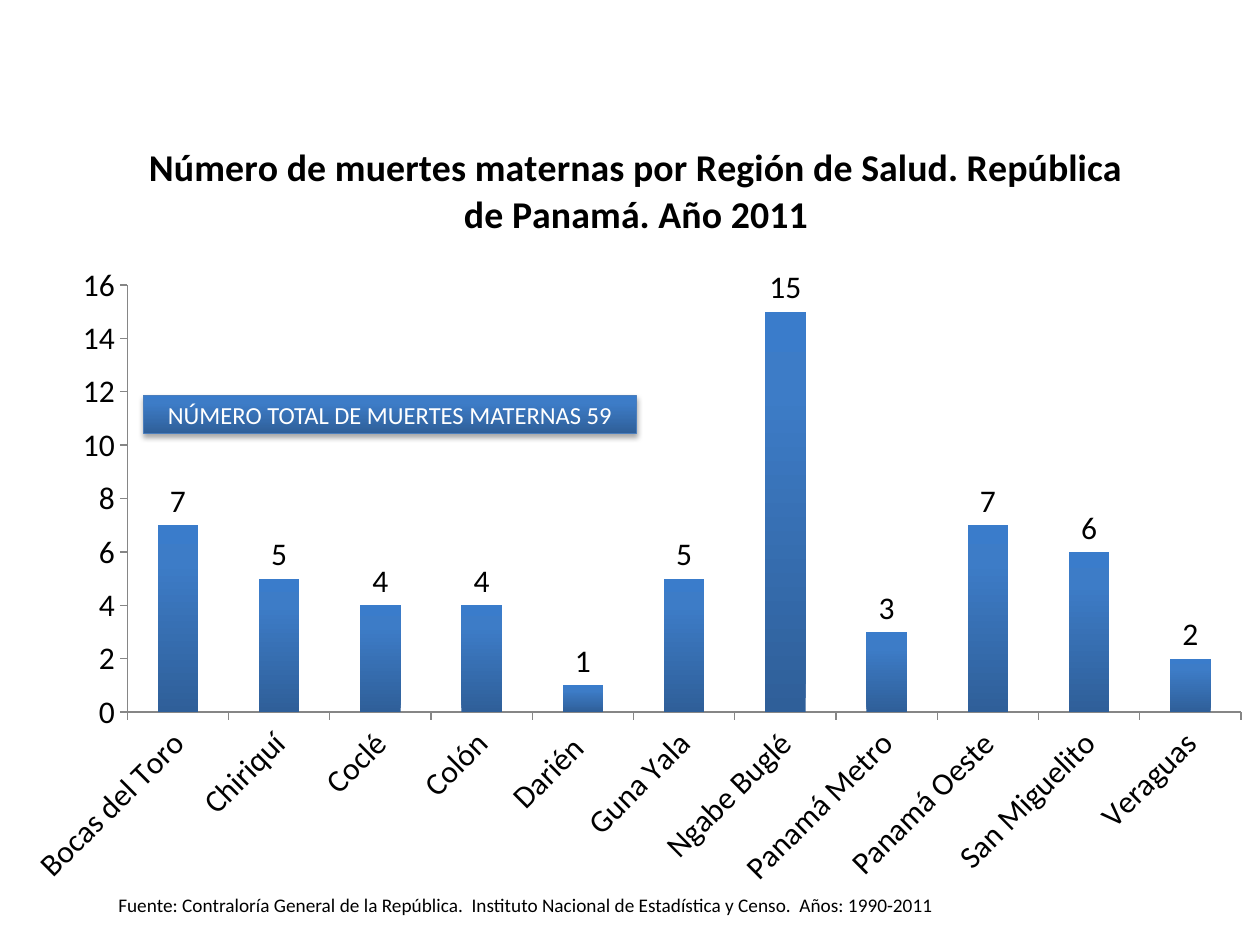
"""Build a slide charting maternal deaths by health region."""
from copy import deepcopy

from lxml import etree
from pptx import Presentation
from pptx.chart.data import CategoryChartData
from pptx.dml.color import RGBColor
from pptx.enum import chart as kinds, shapes, text
from pptx.oxml import ns, parse_xml
from pptx.util import Inches, Pt

BLACK = RGBColor(0, 0, 0)
WHITE = RGBColor(255, 255, 255)
GRAY = RGBColor(0x86, 0x86, 0x86)
EDGE = RGBColor(0x4B, 0x7E, 0xBC)
STOPS = [(0, RGBColor(0x2F, 0x5F, 0x99)),
         (0.8, RGBColor(0x3D, 0x7C, 0xC7)),
         (1, RGBColor(0x3A, 0x7C, 0xCB))]


def shade(fill, root):
    fill.gradient()
    fill.gradient_angle = 90
    group = root.find(".//" + ns.qn("a:gsLst"))
    group.append(deepcopy(group[-1]))
    for stop, (place, color) in zip(fill.gradient_stops, STOPS):
        stop.position = place
        stop.color.rgb = color


def style(font, size, color=BLACK, bold=False):
    look = {"name": "Calibri", "size": Pt(size), "bold": bold}
    for key, value in look.items():
        setattr(font, key, value)
    font.color.rgb = color


deck = Presentation()
deck.slide_width, deck.slide_height = Inches(10), Inches(7.5)
slide = deck.slides.add_slide(deck.slide_layouts[6])

deaths = {"Bocas del Toro": 7, "Chiriquí": 5, "Coclé": 4, "Colón": 4,
          "Darién ": 1, "Guna Yala": 5, "Ngabe Buglé": 15,
          "Panamá Metro": 3, "Panamá Oeste": 7, "San Miguelito": 6,
          "Veraguas": 2}
data = CategoryChartData()
data.categories = list(deaths)
data.add_series("Series 1", list(deaths.values()))
chart = slide.shapes.add_chart(
    kinds.XL_CHART_TYPE.COLUMN_CLUSTERED, Inches(0.05), Inches(0.88),
    Inches(10), Inches(6.28), data).chart
chart.has_legend = False
style(chart.font, 18)
chart.has_title = True
title = chart.chart_title.text_frame
title.text = ("Número de muertes maternas por Región de Salud. "
              "República de Panamá. Año 2011")
style(title.paragraphs[0].runs[0].font, 21.6, bold=True)

plot = chart.plots[0]
plot.gap_width = 150
plot.vary_by_categories = False
bars = plot.series[0]
shade(bars.format.fill, bars._element)
plot.has_data_labels = True
labels = plot.data_labels
labels.show_value = True
labels.position = kinds.XL_LABEL_POSITION.OUTSIDE_END
style(labels.font, 18)

for axis in (chart.category_axis, chart.value_axis):
    axis.has_major_gridlines = False
    axis.major_tick_mark = kinds.XL_TICK_MARK.OUTSIDE
    axis.minor_tick_mark = kinds.XL_TICK_MARK.NONE
    axis.format.line.color.rgb = GRAY
    axis.format.line.width = Pt(0.75)
    style(axis.tick_labels.font, 18)
chart.category_axis._element.find(".//" + ns.qn("a:bodyPr")).set("rot", "-2700000")
scale = {"minimum_scale": 0, "maximum_scale": 16, "major_unit": 2}
for key, value in scale.items():
    setattr(chart.value_axis, key, value)

area = chart._chartSpace.find(".//" + ns.qn("c:plotArea"))
for old in area.findall(ns.qn("c:layout")):
    area.remove(old)
frame = etree.Element(ns.qn("c:layout"))
box = etree.SubElement(frame, ns.qn("c:manualLayout"))
spots = {"layoutTarget": "inner", "xMode": "edge", "yMode": "edge",
         "x": "0.096", "y": "0.22", "w": "0.884", "h": "0.54"}
for key, value in spots.items():
    etree.SubElement(box, ns.qn("c:" + key)).set("val", value)
area.insert(0, frame)

total = slide.shapes.add_shape(
    shapes.MSO_SHAPE.RECTANGLE, Inches(1.14), Inches(3.14),
    Inches(3.91), Inches(0.3))
shade(total.fill, total._element)
total.line.color.rgb = EDGE
total.line.width = Pt(0.75)
total.shadow.inherit = False
glow = total._element.spPr.find(ns.qn("a:effectLst"))
glow.append(parse_xml(
    f'<a:outerShdw {ns.nsdecls("a")} blurRad="{Pt(3.1)}" dist="{Pt(1.8)}" '
    'dir="5400000" rotWithShape="0"><a:srgbClr val="000000">'
    '<a:alpha val="35000"/></a:srgbClr></a:outerShdw>'))
source = slide.shapes.add_textbox(
    Inches(0.84), Inches(7.04), Inches(6.68), Inches(0.33))

notes = [
    (total, "NÚMERO TOTAL DE MUERTES MATERNAS 59", 14, WHITE,
     text.PP_ALIGN.CENTER, text.MSO_ANCHOR.MIDDLE),
    (source, "Fuente: Contraloría General de la República.  Instituto "
     "Nacional de Estadística y Censo.  Años: 1990-2011", 11, BLACK,
     text.PP_ALIGN.LEFT, text.MSO_ANCHOR.TOP)]
for shape, words, size, color, align, anchor in notes:
    body = shape.text_frame
    body.word_wrap = True
    body.vertical_anchor = anchor
    body.text = words
    body.paragraphs[0].alignment = align
    style(body.paragraphs[0].runs[0].font, size, color)

deck.save("out.pptx")
